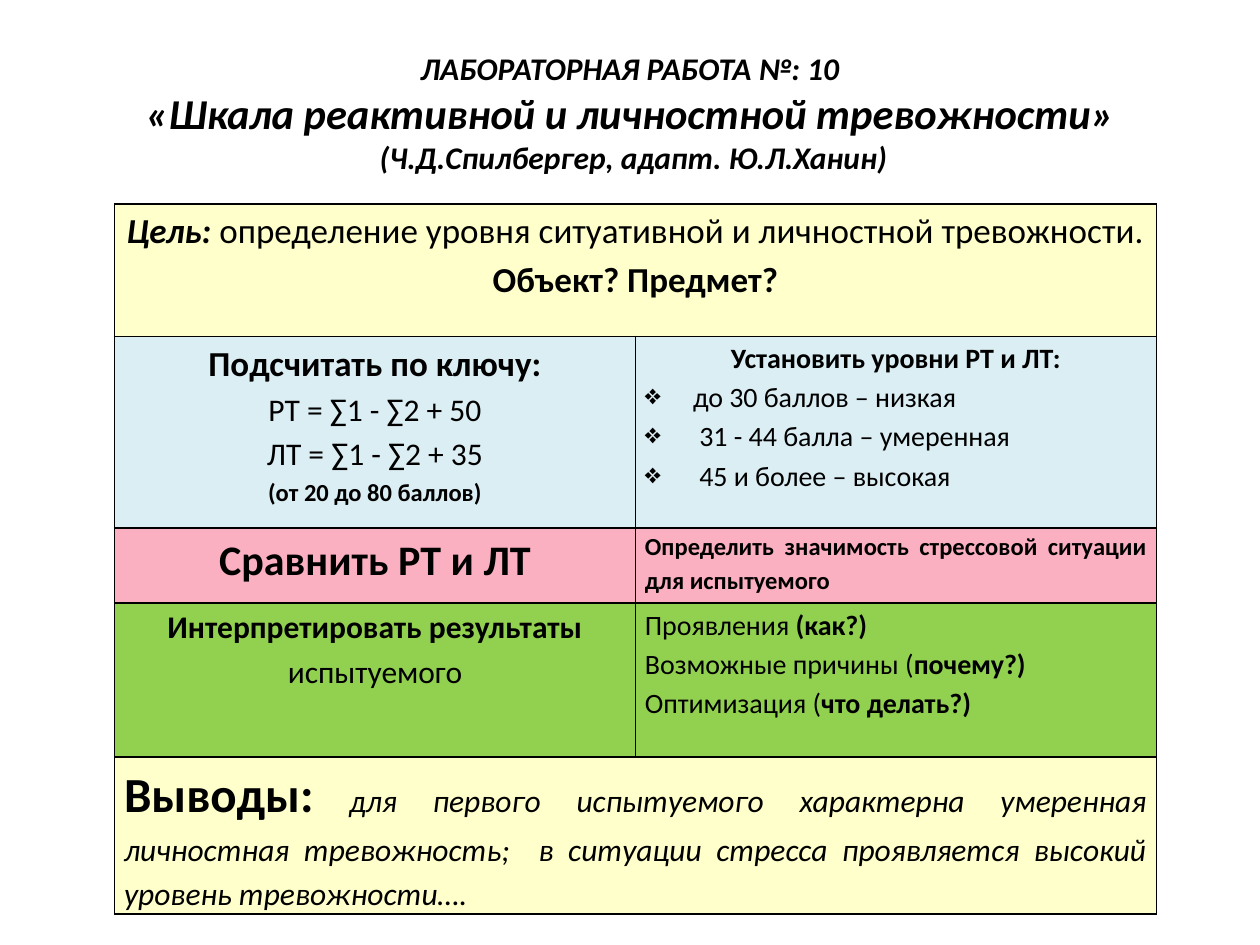
from typing import NamedTuple

from lxml.etree import SubElement
from pptx import Presentation
from pptx.dml.color import RGBColor
from pptx.enum.text import MSO_ANCHOR, PP_ALIGN
from pptx.oxml import parse_xml
from pptx.oxml.ns import nsdecls, qn
from pptx.util import Cm, Pt

HUES = {"text": "000000", "line": "000000", "cream": "FFFFCC",
        "blue": "DBEEF4", "pink": "FAB0C0", "green": "92D050"}
MID, JUST, LEFT = PP_ALIGN.CENTER, PP_ALIGN.JUSTIFY, PP_ALIGN.LEFT
EDGES = ("lnL", "lnR", "lnT", "lnB")


class Run(NamedTuple):
    text: str
    size: float
    bold: bool = False
    italic: bool = False


class Para(NamedTuple):
    runs: list[Run]
    align: PP_ALIGN = MID
    bullet: str = ""


class Row(NamedTuple):
    height: float
    hue: str
    cells: list[list[Para]]


TITLE = [
    Para([Run("ЛАБОРАТОРНАЯ РАБОТА №: 10", 18, True, True)]),
    Para([Run("«Шкала реактивной и личностной тревожности»", 24.3, True, True)]),
    Para([Run(" (Ч.Д.Спилбергер, адапт. Ю.Л.Ханин)", 18, True, True)]),
]

GOAL = [
    Para([Run("Цель: ", 20, True, True),
          Run("определение уровня ситуативной и личностной тревожности.", 20)]),
    Para([Run("Объект? Предмет?", 20, True)]),
]
COUNT = [
    Para([Run("Подсчитать по ключу:", 20, True)]),
    Para([Run("PT = ∑1 - ∑2 + 50", 18)]),
    Para([Run("ЛТ = ∑1 - ∑2 + 35", 18)]),
    Para([Run("(от 20 до 80 баллов)", 14, True)]),
]
LEVELS = [Para([Run("Установить уровни РТ и ЛТ:", 16, True)])] + [
    Para([Run(text, 16)], LEFT, "❖")
    for text in ("до 30 баллов – низкая", " 31 - 44 балла – умеренная",
                 " 45 и более – высокая")
]
MATCH = [Para([Run("Сравнить РТ и ЛТ", 24, True)])]
STRESS = [Para([Run("Определить значимость стрессовой ситуации для испытуемого",
                    14, True)], JUST)]
EXPLAIN = [Para([Run("Интерпретировать результаты ", 18, True),
                 Run("испытуемого", 18)])]
ASPECTS = [
    Para([Run(plain, 16), Run(strong, 16, True)], JUST)
    for plain, strong in (("Проявления ", "(как?)"),
                          ("Возможные причины (", "почему?)"),
                          ("Оптимизация (", "что делать?)"))
]
RESULT = [Para([
    Run("Выводы:", 28, True), Run(" ", 18),
    Run("для первого испытуемого характерна умеренная личностная тревожность;  "
        "в ситуации стресса проявляется высокий уровень тревожности….",
        18, italic=True)], JUST)]

ROWS = [
    Row(2.67, "cream", [GOAL]),
    Row(3.86, "blue", [COUNT, LEVELS]),
    Row(1.52, "pink", [MATCH, STRESS]),
    Row(3.1, "green", [EXPLAIN, ASPECTS]),
    Row(3.17, "cream", [RESULT]),
]


def write(frame, paras: list[Para], spacing: float) -> None:
    for i, para in enumerate(paras):
        line = frame.paragraphs[0] if i == 0 else frame.add_paragraph()
        line.alignment, line.line_spacing = para.align, spacing
        if para.bullet:
            props = line._p.get_or_add_pPr()
            props.set("marL", str(Cm(0.97)))
            props.set("indent", str(-Cm(0.97)))
            SubElement(props, qn("a:buChar")).set("char", para.bullet)
        for part in para.runs:
            run = line.add_run()
            run.text = part.text
            style = {"name": "Calibri", "size": Pt(part.size),
                     "bold": part.bold, "italic": part.italic}
            for key, value in style.items():
                setattr(run.font, key, value)
            run.font.color.rgb = RGBColor.from_string(HUES["text"])


def dress(cell, hue: str) -> None:
    """Set the margins, fill and four borders of a cell."""
    margins = {"margin_left": Cm(0.19), "margin_right": Cm(0.19),
               "margin_top": 0, "margin_bottom": 0}
    for key, value in margins.items():
        setattr(cell, key, value)
    cell.fill.solid()
    cell.fill.fore_color.rgb = RGBColor.from_string(HUES[hue])
    props = cell._tc.get_or_add_tcPr()
    for i, edge in enumerate(EDGES):
        props.insert(i, parse_xml(
            f'<a:{edge} {nsdecls("a")} w="{Pt(1)}"><a:solidFill>'
            f'<a:srgbClr val="{HUES["line"]}"/></a:solidFill></a:{edge}>'))


def add_title(slide) -> None:
    box = slide.shapes.add_textbox(Cm(1.27), Cm(0.76), Cm(22.86), Cm(3))
    frame = box.text_frame
    frame.word_wrap = True
    frame.vertical_anchor = MSO_ANCHOR.MIDDLE
    write(frame, TITLE, 1)


def add_grid(slide) -> None:
    height = sum(row.height for row in ROWS)
    table = slide.shapes.add_table(len(ROWS), 2, Cm(2.31), Cm(4.11),
                                   Cm(21), Cm(height)).table
    table.first_row = table.horz_banding = False
    for i, row in enumerate(ROWS):
        table.rows[i].height = Cm(row.height)
        pair = [table.cell(i, 0), table.cell(i, 1)]
        if len(row.cells) == 1:
            pair[0].merge(pair[1])
        for cell in pair:
            dress(cell, row.hue)
        for cell, paras in zip(pair, row.cells):
            write(cell.text_frame, paras, 1.15)


def main() -> None:
    deck = Presentation()
    deck.slide_width, deck.slide_height = Cm(25.4), Cm(19.05)
    slide = deck.slides.add_slide(deck.slide_layouts[6])
    add_title(slide)
    add_grid(slide)
    deck.save("out.pptx")


if __name__ == "__main__":
    main()
